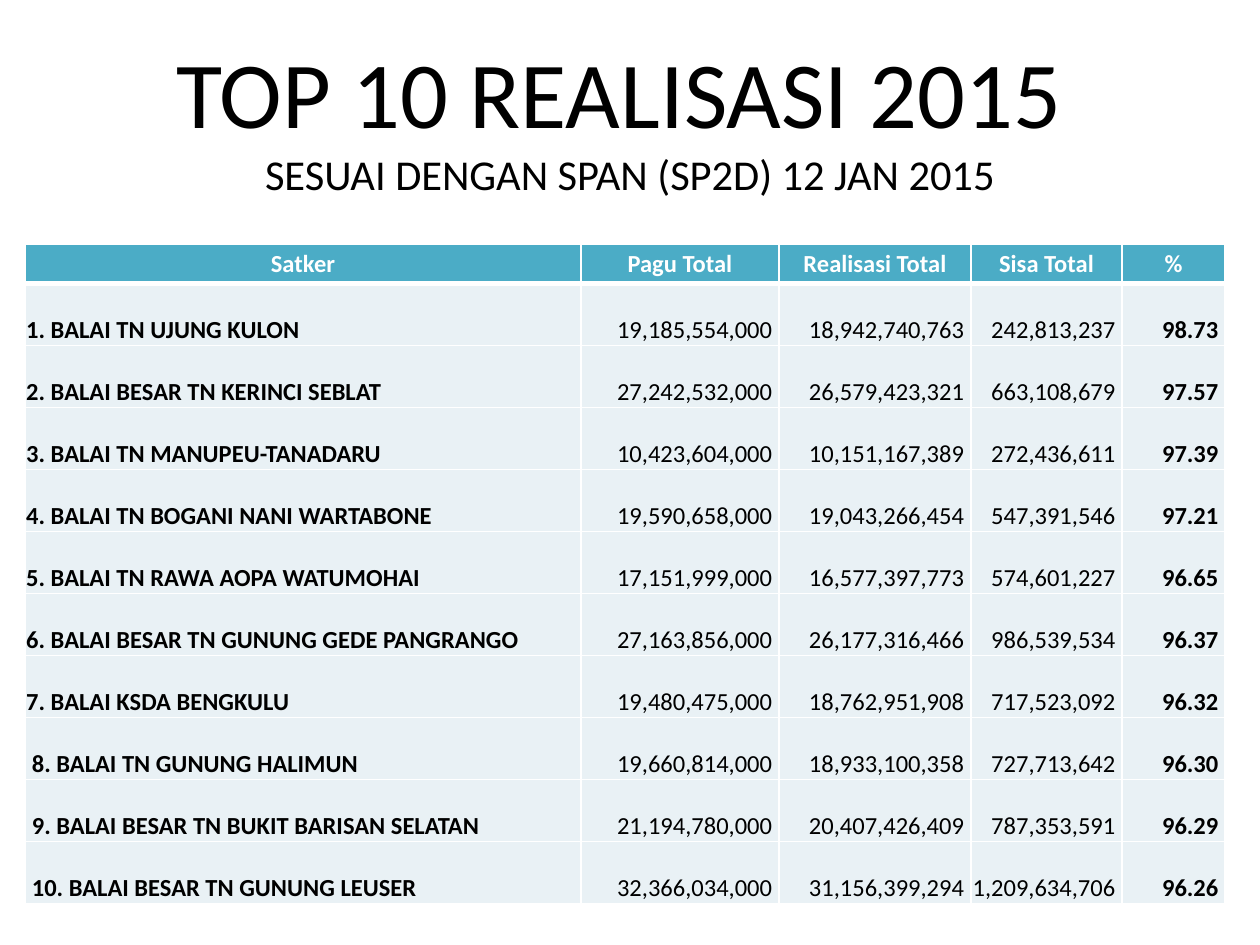
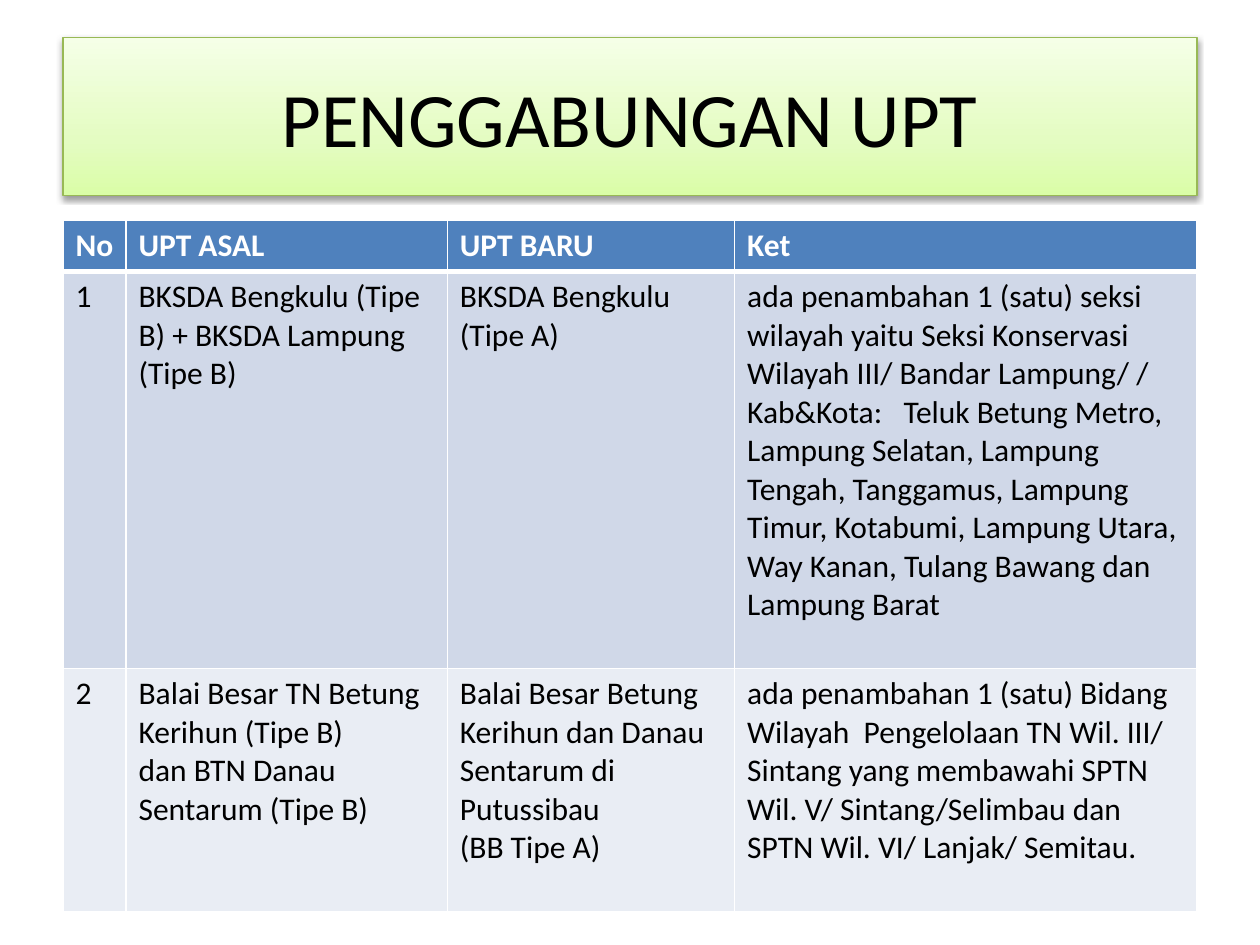
"""Build two slides: the top ten budget realisations and the merging of units."""
from copy import deepcopy
from dataclasses import dataclass

from lxml import etree
from pptx import Presentation
from pptx.dml.color import RGBColor
from pptx.enum.text import MSO_ANCHOR, MSO_AUTO_SIZE, PP_ALIGN
from pptx.oxml.ns import qn
from pptx.util import Pt

LEFT, CENTER, RIGHT = PP_ALIGN.LEFT, PP_ALIGN.CENTER, PP_ALIGN.RIGHT
TOP, MIDDLE, BOTTOM = MSO_ANCHOR.TOP, MSO_ANCHOR.MIDDLE, MSO_ANCHOR.BOTTOM
NO_AUTOFIT = MSO_AUTO_SIZE.NONE
TITLE_ONLY = 5


@dataclass(frozen=True)
class Theme:
    font: str = "Calibri"
    black: str = "000000"
    white: str = "FFFFFF"
    teal: str = "4BACC6"
    pale_teal: str = "E9F1F5"
    blue: str = "4F81BD"
    blue_bands: tuple = ("D0D8E8", "E9EDF4")
    green_line: str = "98B955"
    green_stops: tuple = ((0, "DAFDA7"), (0.35, "E4FCC2"), (1, "F5FFE7"))
    headline_size: float = 54
    subtitle_size: float = 24.3
    title_size: float = 44
    ranking_size: float = 14
    merger_size: float = 18
    thin: float = 1
    thick: float = 3


@dataclass(frozen=True)
class TableStyle:
    size: float
    header_fill: str
    bands: tuple
    margins: tuple
    header_align: int = LEFT
    header_anchor: int = TOP
    body_anchor: int = TOP
    aligns: tuple = (LEFT,) * 4
    bold_columns: tuple = ()


class Deck:
    """Hold the theme and the current slide, and add elements to it."""

    def __init__(self, theme):
        self.theme = theme
        self.presentation = Presentation()
        self.presentation.slide_width = Pt(720)
        self.presentation.slide_height = Pt(540)
        self.slide = None

    def add_slide(self):
        layout = self.presentation.slide_layouts[TITLE_ONLY]
        self.slide = self.presentation.slides.add_slide(layout)

    def add_run(self, paragraph, text, size, color, bold=False):
        run = paragraph.add_run()
        run.text = text
        run.font.name = self.theme.font
        run.font.size = Pt(size)
        run.font.bold = bold
        run.font.color.rgb = RGBColor.from_string(color)

    def add_title(self, lines):
        title = self.slide.shapes.title
        title.left, title.top, title.width, title.height = Pt(36), Pt(21.6), Pt(648), Pt(90)
        frame = title.text_frame
        frame.word_wrap = True
        frame.auto_size = NO_AUTOFIT
        frame.vertical_anchor = MIDDLE
        paragraph = frame.paragraphs[0]
        paragraph.alignment = CENTER
        for index, (text, size) in enumerate(lines):
            if index:
                paragraph.add_line_break()
            self.add_run(paragraph, text, size, self.theme.black)
        return title

    def add_green_band(self, shape):
        fill = shape.fill
        fill.gradient()
        fill.gradient_angle = 90
        properties = shape._element.spPr
        stop_list = properties.find(".//" + qn("a:gsLst"))
        stop_list.insert(1, deepcopy(stop_list[0]))
        for stop, (position, color) in zip(fill.gradient_stops, self.theme.green_stops):
            stop.position = position
            stop.color.rgb = RGBColor.from_string(color)
        shape.line.color.rgb = RGBColor.from_string(self.theme.green_line)
        shape.line.width = Pt(0.75)
        shape.shadow.inherit = False
        shadow = etree.SubElement(
            properties.find(qn("a:effectLst")), qn("a:outerShdw"),
            blurRad=str(Pt(3.1)), dist=str(Pt(1.6)), dir="5400000", rotWithShape="0")
        color = etree.SubElement(shadow, qn("a:srgbClr"), val=self.theme.black)
        etree.SubElement(color, qn("a:alpha"), val="38000")

    def add_borders(self, cell, row):
        theme = self.theme
        widths = {
            "a:lnL": theme.thin,
            "a:lnR": theme.thin,
            "a:lnT": theme.thick if row == 1 else theme.thin,
            "a:lnB": theme.thick if row == 0 else theme.thin,
        }
        for tag, width in widths.items():
            line = etree.SubElement(cell._tc.get_or_add_tcPr(), qn(tag), w=str(Pt(width)))
            fill = etree.SubElement(line, qn("a:solidFill"))
            etree.SubElement(fill, qn("a:srgbClr"), val=theme.white)

    def fill_cell(self, cell, row, column, text, style):
        header = row == 0
        self.add_borders(cell, row)
        color = style.header_fill if header else style.bands[(row - 1) % len(style.bands)]
        cell.fill.solid()
        cell.fill.fore_color.rgb = RGBColor.from_string(color)
        cell.vertical_anchor = style.header_anchor if header else style.body_anchor
        left, top, right, bottom = style.margins
        cell.margin_left, cell.margin_top = Pt(left), Pt(top)
        cell.margin_right, cell.margin_bottom = Pt(right), Pt(bottom)
        frame = cell.text_frame
        for index, line in enumerate(text.split("\n")):
            paragraph = frame.add_paragraph() if index else frame.paragraphs[0]
            paragraph.alignment = style.header_align if header else style.aligns[column]
            if paragraph.alignment == RIGHT:
                cell.margin_right = Pt(3.8)
            self.add_run(paragraph, line, style.size,
                         self.theme.white if header else self.theme.black,
                         header or column in style.bold_columns)

    def add_table(self, left, top, widths, heights, rows, style):
        frame = self.slide.shapes.add_table(
            len(rows), len(widths), Pt(left), Pt(top), Pt(sum(widths)), Pt(sum(heights)))
        table = frame.table
        table.horz_banding = False
        for column, width in zip(table.columns, widths):
            column.width = Pt(width)
        for table_row, height in zip(table.rows, heights):
            table_row.height = Pt(height)
        for row, texts in enumerate(rows):
            for column, text in enumerate(texts):
                self.fill_cell(table.cell(row, column), row, column, text, style)
        return table


RANKING_HEADER = ("Satker", "Pagu Total", "Realisasi Total", "Sisa Total", "%")
RANKING = (
    ("BALAI TN UJUNG KULON", "19,185,554,000", "18,942,740,763", "242,813,237", "98.73"),
    ("BALAI BESAR TN KERINCI SEBLAT", "27,242,532,000", "26,579,423,321", "663,108,679", "97.57"),
    ("BALAI TN MANUPEU-TANADARU", "10,423,604,000", "10,151,167,389", "272,436,611", "97.39"),
    ("BALAI TN BOGANI NANI WARTABONE", "19,590,658,000", "19,043,266,454", "547,391,546", "97.21"),
    ("BALAI TN RAWA AOPA WATUMOHAI", "17,151,999,000", "16,577,397,773", "574,601,227", "96.65"),
    ("BALAI BESAR TN GUNUNG GEDE PANGRANGO", "27,163,856,000", "26,177,316,466", "986,539,534", "96.37"),
    ("BALAI KSDA BENGKULU", "19,480,475,000", "18,762,951,908", "717,523,092", "96.32"),
    ("BALAI TN GUNUNG HALIMUN", "19,660,814,000", "18,933,100,358", "727,713,642", "96.30"),
    ("BALAI BESAR TN BUKIT BARISAN SELATAN", "21,194,780,000", "20,407,426,409", "787,353,591", "96.29"),
    ("BALAI BESAR TN GUNUNG LEUSER", "32,366,034,000", "31,156,399,294", "1,209,634,706", "96.26"),
)
MERGERS = (
    ("No", "UPT ASAL", "UPT BARU", "Ket"),
    ("1", "BKSDA Bengkulu (Tipe B) + BKSDA Lampung (Tipe B)", "BKSDA Bengkulu (Tipe A)",
     "ada penambahan 1 (satu) seksi wilayah yaitu Seksi Konservasi Wilayah III/ Bandar Lampung/ / "
     "Kab&Kota:   Teluk Betung Metro, Lampung Selatan, Lampung Tengah, Tanggamus, Lampung Timur, "
     "Kotabumi, Lampung Utara, Way Kanan, Tulang Bawang dan Lampung Barat"),
    ("2", "Balai Besar TN Betung Kerihun (Tipe B)\ndan BTN Danau Sentarum (Tipe B)",
     "Balai Besar Betung Kerihun dan Danau Sentarum di Putussibau\n(BB Tipe A)",
     "ada penambahan 1 (satu) Bidang Wilayah  Pengelolaan TN Wil. III/ Sintang yang membawahi "
     "SPTN Wil. V/ Sintang/Selimbau dan SPTN Wil. VI/ Lanjak/ Semitau."),
)


def build_ranking(deck):
    theme = deck.theme
    deck.add_slide()
    deck.add_title((("TOP 10 REALISASI 2015 ", theme.headline_size),
                    ("SESUAI DENGAN SPAN (SP2D) 12 JAN 2015", theme.subtitle_size)))
    style = TableStyle(
        theme.ranking_size, theme.teal, (theme.pale_teal,), (0.6, 0.6, 0.6, 0),
        header_align=CENTER, header_anchor=MIDDLE, body_anchor=BOTTOM,
        aligns=(LEFT,) + (RIGHT,) * 4, bold_columns=(0, 4))
    rows = [RANKING_HEADER]
    rows += [(f"{rank}. {unit}", *values) for rank, (unit, *values) in enumerate(RANKING, 1)]
    table = deck.add_table(14.4, 139.7, (317.5, 113.3, 109.7, 86.4, 58.8),
                           [22.2] + [35.45] * len(RANKING), rows, style)
    for row in range(8, 11):
        table.cell(row, 0).margin_left = Pt(3.8)


def build_mergers(deck):
    theme = deck.theme
    deck.add_slide()
    title = deck.add_title((("PENGGABUNGAN UPT", theme.title_size),))
    deck.add_green_band(title)
    style = TableStyle(theme.merger_size, theme.blue, theme.blue_bands, (7.2, 3.6, 7.2, 3.6))
    deck.add_table(36, 126, (36, 183.6, 164.2, 264.2), (29.2, 226.8, 138.9), MERGERS, style)


def main():
    deck = Deck(Theme())
    build_ranking(deck)
    build_mergers(deck)
    deck.presentation.save("out.pptx")


if __name__ == "__main__":
    main()
